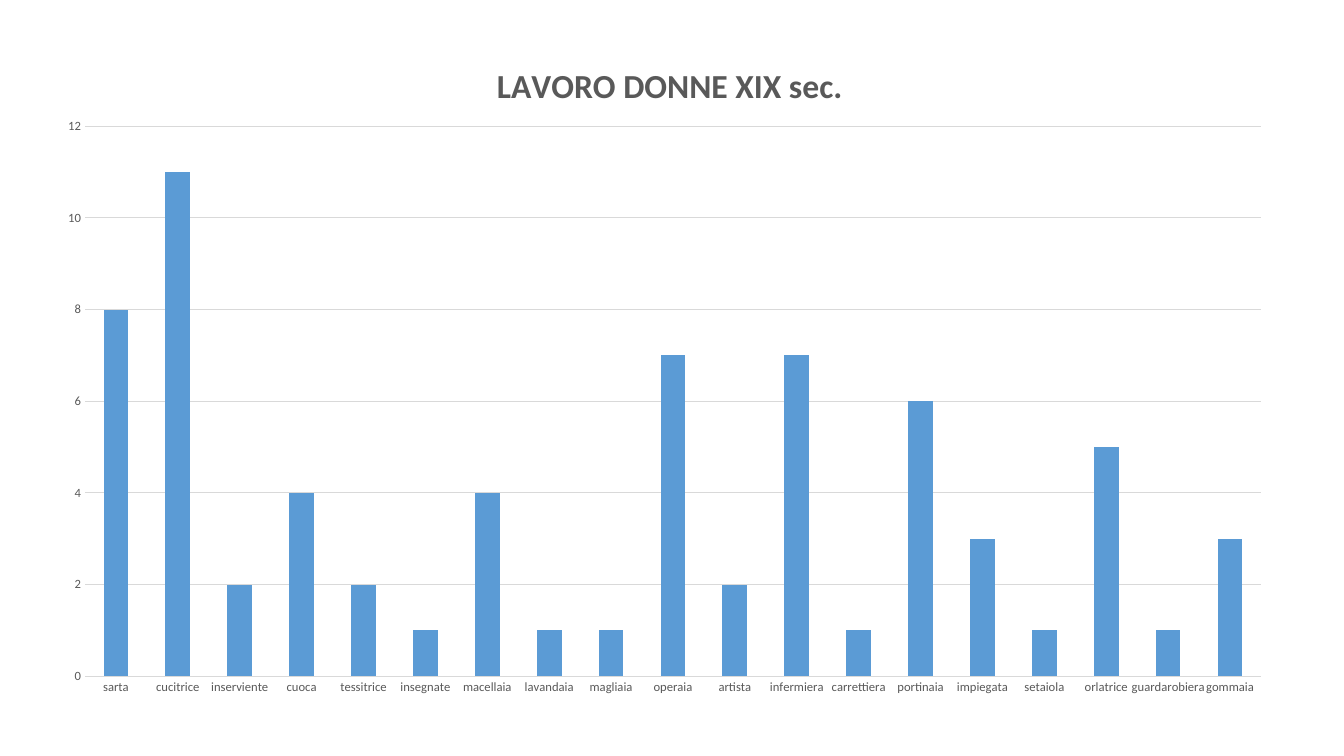
from lxml import etree
from pptx import Presentation
from pptx.chart.data import CategoryChartData
from pptx.dml.color import RGBColor
from pptx.enum import chart as ch
from pptx.oxml import ns
from pptx.util import Inches, Pt


def style_font(font, size, color, bold=False):
    font.name, font.size, font.bold = "Calibri", Pt(size), bold
    font.color.rgb = RGBColor.from_string(color)


def set_layout(parent, position, **values):
    """Place a chart part by fractions of the chart's size."""
    for old in parent.findall(ns.qn("c:layout")):
        parent.remove(old)
    layout = etree.Element(ns.qn("c:layout"))
    manual = etree.SubElement(layout, ns.qn("c:manualLayout"))
    for tag, val in values.items():
        etree.SubElement(manual, ns.qn("c:" + tag)).set("val", str(val))
    parent.insert(position, layout)


prs = Presentation()
prs.slide_width, prs.slide_height = Inches(13.33), Inches(7.5)
s = prs.slides.add_slide(prs.slide_layouts[6])

# Number of women in each job
jobs = {
    "sarta": 8, "cucitrice": 11, "inserviente": 2, "cuoca": 4,
    "tessitrice": 2, "insegnate": 1, "macellaia": 4, "lavandaia": 1,
    "magliaia": 1, "operaia": 7, "artista": 2, "infermiera": 7,
    "carrettiera": 1, "portinaia": 6, "impiegata": 3, "setaiola": 1,
    "orlatrice": 5, "guardarobiera": 1, "gommaia": 3,
}
data = CategoryChartData()
data.categories = list(jobs)
data.add_series("Series 1", list(jobs.values()))
chart = s.shapes.add_chart(
    ch.XL_CHART_TYPE.COLUMN_CLUSTERED,
    Inches(0.43), Inches(0.36), Inches(12.33), Inches(6.67), data).chart
style_font(chart.font, 10, "000000")
chart.has_legend = False

# Title
p = chart.chart_title.text_frame.paragraphs[0]
r = p.add_run()
r.text = "LAVORO DONNE XIX sec."
style_font(r.font, 24, "595959", bold=True)
chart.chart_title.include_in_layout = False
set_layout(chart.chart_title._element, 1,
           xMode="edge", yMode="edge", x=0.36, y=0.03)

# Columns
plot = chart.plots[0]
plot.gap_width = 150
plot.vary_by_categories = False
fill = plot.series[0].format.fill
fill.solid()
fill.fore_color.rgb = RGBColor.from_string("5B9BD5")
set_layout(chart._chartSpace.chart.plotArea, 0, layoutTarget="inner",
           xMode="edge", yMode="edge", x=0.0335, y=0.134, w=0.946, h=0.818)

# Axes and gridlines
for axis in (chart.category_axis, chart.value_axis):
    axis.major_tick_mark = axis.minor_tick_mark = ch.XL_TICK_MARK.NONE
    style_font(axis.tick_labels.font, 9, "595959")
    axis.format.line.fill.background()
    body = axis._element.find(ns.qn("c:txPr")).find(ns.qn("a:bodyPr"))
    body.set("rot", "-60000000")  # automatic label rotation
chart.value_axis.minimum_scale = 0
chart.value_axis.maximum_scale = 12
chart.value_axis.major_unit = 2
grid = chart.value_axis.major_gridlines.format.line
grid.width = Pt(0.75)
grid.color.rgb = RGBColor.from_string("D9D9D9")

prs.save("out.pptx")
